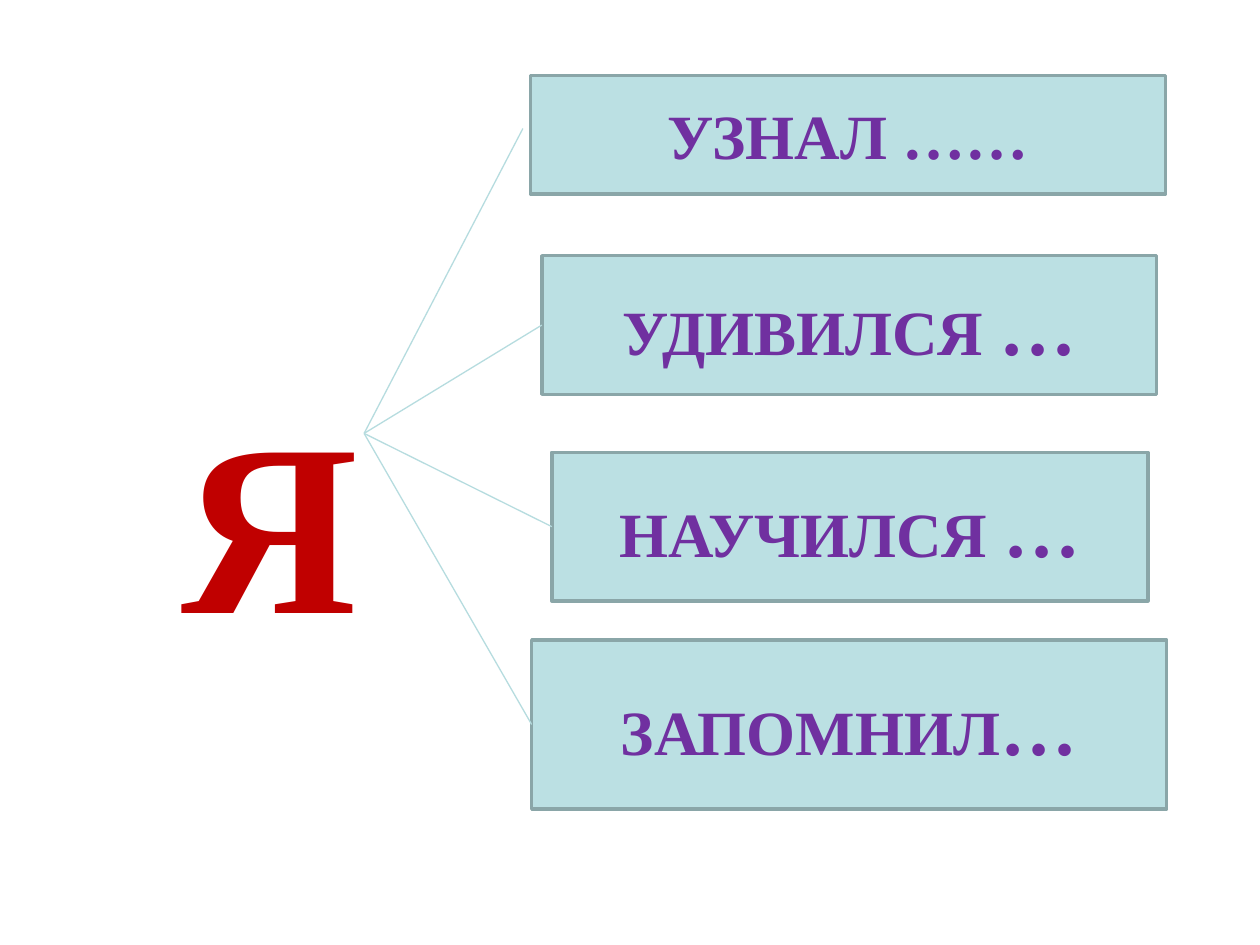
from lxml.etree import SubElement
from pptx import Presentation
from pptx.dml.color import RGBColor
from pptx.enum.shapes import MSO_CONNECTOR, MSO_SHAPE
from pptx.enum.text import MSO_ANCHOR, PP_ALIGN
from pptx.oxml.ns import qn
from pptx.util import Inches, Pt

RED = RGBColor(0xC0, 0x00, 0x00)
PURPLE = RGBColor(0x70, 0x30, 0xA0)
PALE = RGBColor(0xBB, 0xE0, 0xE3)
EDGE = RGBColor(0x8A, 0xA6, 0xA8)
RAY = RGBColor(0xB6, 0xDC, 0xDF)

HUB = (2.89, 3.44)
ANSWERS = [
    ((4.21, 0.6, 5.04, 0.94), [("УЗНАЛ ……", 36)], (-0.06, -0.05)),
    ((4.3, 2.03, 4.88, 1.1), [("УДИВИЛСЯ ", 36), ("…", 44)], (0, 0)),
    ((4.38, 3.59, 4.73, 1.18), [("НАУЧИЛСЯ ", 36), ("…", 44)], (0, 0)),
    ((4.22, 5.08, 5.04, 1.34), [("ЗАПОМНИЛ", 36), ("…", 44)], (0, 0)),
]


def add_run(p, text, size=36, color=PURPLE):
    r = p.add_run()
    r.text = text
    r.font.name = "Times New Roman"
    r.font.size = Pt(size)
    r.font.bold = True
    r.font.color.rgb = color


def center_text(tf):
    tf.word_wrap = True
    tf.vertical_anchor = MSO_ANCHOR.MIDDLE
    p = tf.paragraphs[0]
    p.alignment = PP_ALIGN.CENTER
    return p


def add_letter(s, box):
    tf = s.shapes.add_textbox(*map(Inches, box)).text_frame
    tf.margin_top = tf.margin_bottom = 0
    add_run(center_text(tf), "Я", size=140, color=RED)


def add_answer(s, box, parts):
    sp = s.shapes.add_shape(MSO_SHAPE.RECTANGLE, *map(Inches, box))
    sp.shadow.inherit = False
    sp.fill.solid()
    sp.fill.fore_color.rgb = PALE
    sp.line.color.rgb = EDGE
    sp.line.width = Pt(2)
    p = center_text(sp.text_frame)
    for text, size in parts:
        add_run(p, text, size=size)


def add_ray(s, box, offset):
    left, top, _, height = box
    dx, dy = offset
    tip = (left + dx, top + height / 2 + dy)
    line = s.shapes.add_connector(MSO_CONNECTOR.STRAIGHT, *map(Inches, HUB + tip))
    line.line.color.rgb = RAY
    line.line.width = Pt(0.75)
    SubElement(line._element.spPr, qn("a:effectLst"))


def main():
    prs = Presentation()
    prs.slide_width, prs.slide_height = Inches(10), Inches(7.5)
    s = prs.slides.add_slide(prs.slide_layouts[6])
    add_letter(s, (0.5, 2.97, 3.29, 2.24))
    for box, parts, _ in ANSWERS:
        add_answer(s, box, parts)
    for box, _, offset in ANSWERS:
        add_ray(s, box, offset)
    prs.save("out.pptx")


if __name__ == "__main__":
    main()
